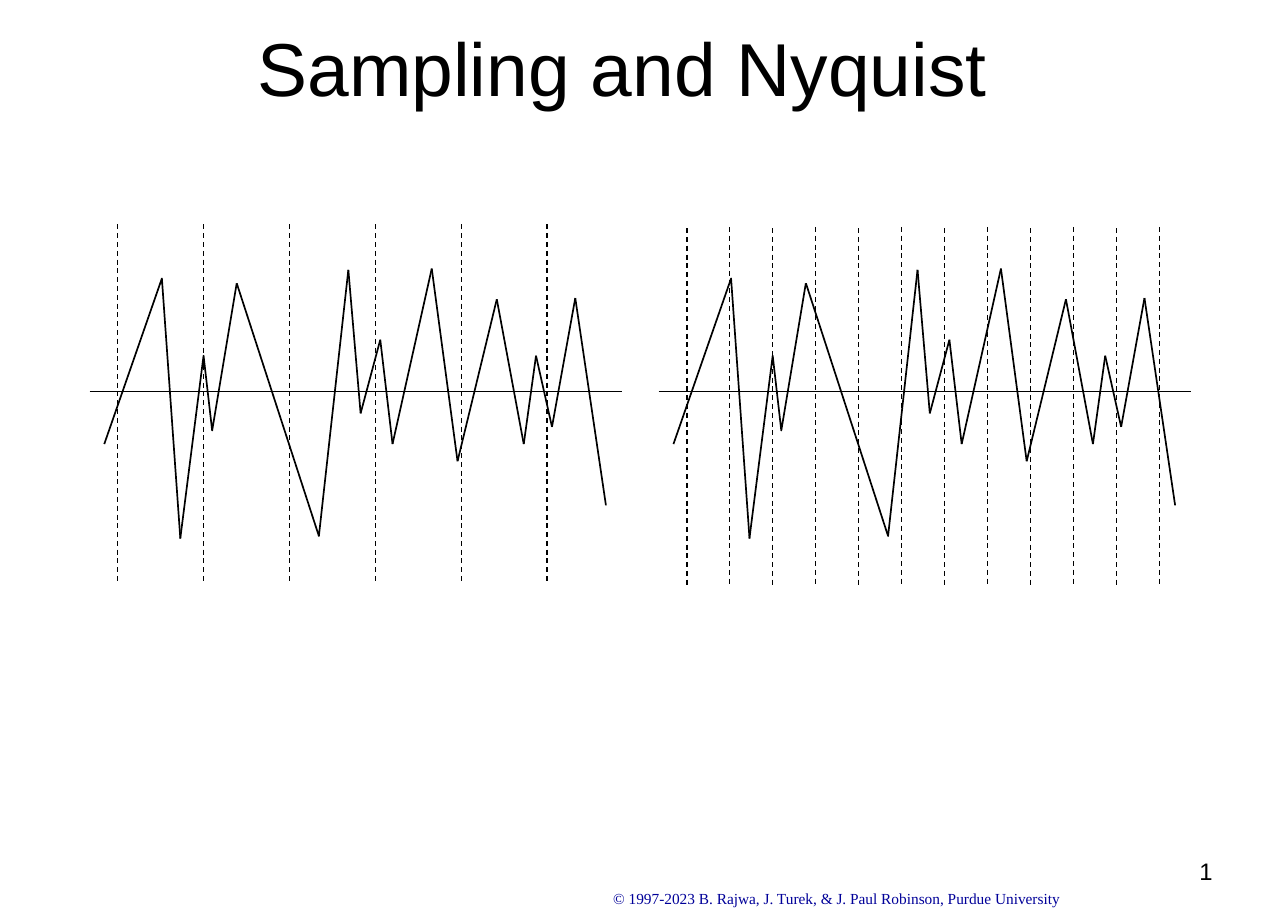
from itertools import pairwise
from typing import NamedTuple

from lxml.etree import SubElement
from pptx import Presentation
from pptx.dml.color import RGBColor
from pptx.enum.dml import MSO_LINE
from pptx.enum.shapes import MSO_CONNECTOR as Connector
from pptx.enum.text import MSO_ANCHOR as Anchor, PP_ALIGN as Align
from pptx.oxml.ns import qn
from pptx.slide import Slide
from pptx.util import Emu, Pt

EMU_PER_PX = 9144
COLOURS = {"ink": "000000", "copyright": "000099"}


class Point(NamedTuple):
    x: int
    y: int


class Sampling(NamedTuple):
    left: int
    top: int


BENT_STROKES = [
    [Point(85, 362), Point(132, 227), Point(147, 439)],
    [Point(147, 439), Point(166, 290), Point(173, 351), Point(193, 231)],
    [Point(193, 231), Point(260, 437), Point(284, 220)],
]
STRAIGHT_RUN = [
    Point(284, 220), Point(294, 337), Point(310, 277), Point(320, 362),
    Point(352, 219), Point(373, 376), Point(405, 244), Point(427, 362),
    Point(437, 290), Point(450, 348), Point(469, 243), Point(494, 412),
]
SIGNAL_SHIFTS = [0, 464]
AXIS_START, AXIS_END = Point(73, 319), Point(507, 319)
SAMPLINGS = [Sampling(96, 183), Sampling(560, 186), Sampling(595, 185)]
SAMPLE_COUNT, SAMPLE_PITCH, SAMPLE_HEIGHT = 6, 70, 292


def px(value: int) -> Emu:
    return Emu(value * EMU_PER_PX)


def colour(name: str) -> RGBColor:
    return RGBColor.from_string(COLOURS[name])


def shifted(point: Point, shift: int) -> Point:
    return Point(point.x + shift, point.y)


def add_text(slide: Slide, text: str, left: int, top: int, width: int, height: int, *,
             size: int, font: str = "Arial", ink: str = "ink", align: Align = Align.LEFT,
             anchor: Anchor = Anchor.TOP, wrap: bool = True, spacing: float = 1.0) -> None:
    box = slide.shapes.add_textbox(px(left), px(top), px(width), px(height))
    frame = box.text_frame
    frame.word_wrap = wrap
    frame.vertical_anchor = anchor
    paragraph = frame.paragraphs[0]
    paragraph.alignment = align
    paragraph.line_spacing = spacing
    run = paragraph.add_run()
    run.text = text
    run.font.name = font
    run.font.size = Pt(size)
    run.font.color.rgb = colour(ink)


def add_line(slide: Slide, start: Point, end: Point, weight: float, dashed: bool = False) -> None:
    connector = slide.shapes.add_connector(
        Connector.STRAIGHT, px(start.x), px(start.y), px(end.x), px(end.y))
    connector.line.color.rgb = colour("ink")
    connector.line.width = Pt(weight)
    if dashed:
        connector.line.dash_style = MSO_LINE.DASH
    SubElement(connector.element.spPr, qn("a:effectLst"))


def add_bent_stroke(slide: Slide, points: list[Point]) -> None:
    builder = slide.shapes.build_freeform(points[0].x, points[0].y, scale=EMU_PER_PX)
    builder.add_line_segments(points[1:], close=False)
    shape = builder.convert_to_shape()
    shape.shadow.inherit = False
    shape.fill.background()
    shape.line.color.rgb = colour("ink")
    shape.line.width = Pt(1)


def add_signal(slide: Slide, shift: int) -> None:
    add_line(slide, shifted(AXIS_START, shift), shifted(AXIS_END, shift), 0.5)
    for stroke in BENT_STROKES:
        add_bent_stroke(slide, [shifted(point, shift) for point in stroke])
    for start, end in pairwise(STRAIGHT_RUN):
        add_line(slide, shifted(start, shift), shifted(end, shift), 1)


def add_sampling(slide: Slide, sampling: Sampling) -> None:
    for index in range(SAMPLE_COUNT):
        x = sampling.left + index * SAMPLE_PITCH
        add_line(slide, Point(x, sampling.top), Point(x, sampling.top + SAMPLE_HEIGHT),
                 0.75, dashed=True)


def main() -> None:
    presentation = Presentation()
    presentation.slide_width, presentation.slide_height = px(1050), px(750)
    slide = presentation.slides.add_slide(presentation.slide_layouts[6])
    add_text(slide, "© 1997-2023 B. Rajwa, J. Turek, & J. Paul Robinson, Purdue University",
             490, 720, 516, 25, size=9, font="Times New Roman", ink="copyright")
    add_text(slide, "Sampling and Nyquist", 35, 0, 945, 108, size=44,
             align=Align.CENTER, anchor=Anchor.MIDDLE)
    for shift in SIGNAL_SHIFTS:
        add_signal(slide, shift)
    for sampling in SAMPLINGS:
        add_sampling(slide, sampling)
    add_text(slide, "1", 968, 696, 31, 31, size=14, wrap=False, spacing=0.9)
    presentation.save("out.pptx")


if __name__ == "__main__":
    main()
